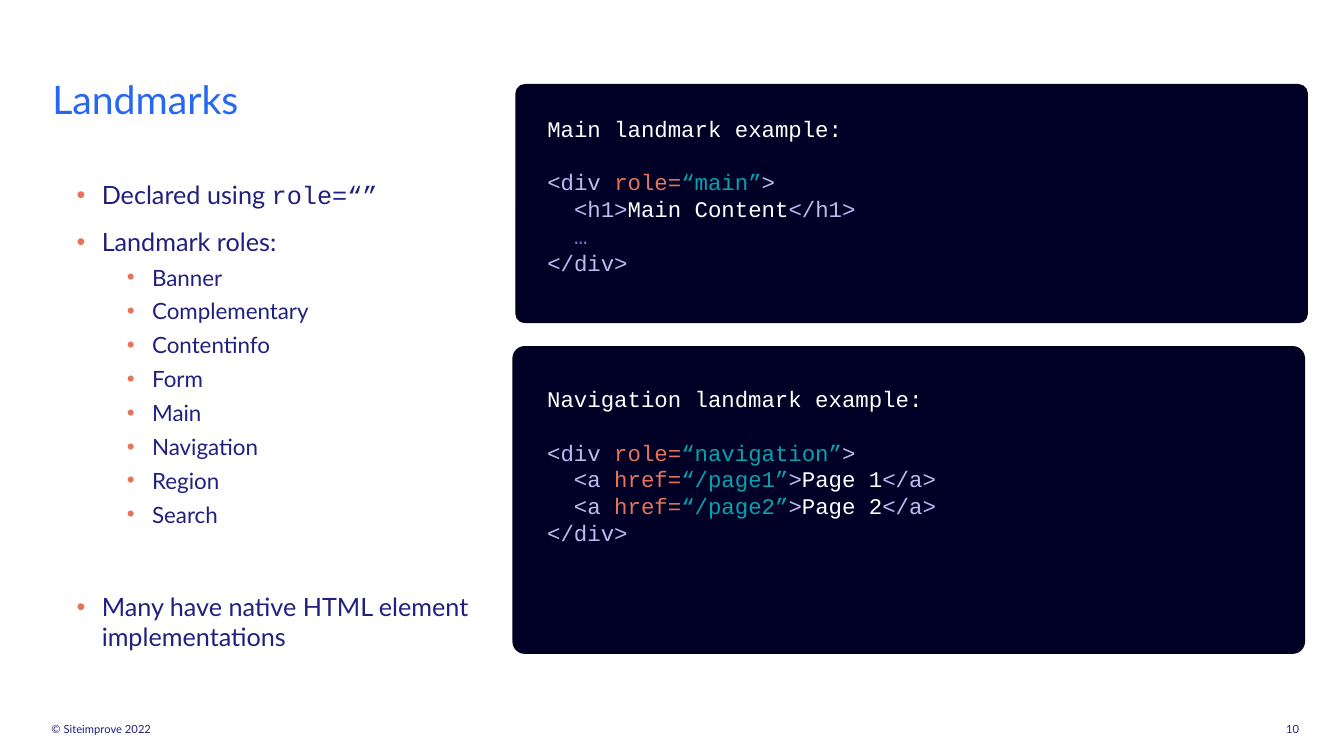
from pptx import Presentation
from pptx.dml.color import RGBColor as Rgb
from pptx.enum.shapes import MSO_SHAPE as Shape
from pptx.enum.text import MSO_ANCHOR as Anchor, PP_ALIGN as Align
from pptx.oxml.ns import qn
from pptx.util import Pt
from lxml.etree import SubElement as Sub

# Content
TITLE = "Landmarks"
FOOTER = "© Siteimprove 2022"
NUMBER = "10"
SANS, MONO = "Lato", "Courier New"
COLORS = {
    "title": "2767F1", "text": "21207F", "bullet": "E57459",
    "panel": "000026", "edge": "00001C", "plain": "FFFFFF",
    "tag": "BDBBF1", "attr": "E57459", "value": "00A5AE", "dots": "7C77E4",
}
# Bullets: level, space before, runs of (text, font)
ROLES = ["Banner", "Complementary", "Contentinfo", "Form",
         "Main", "Navigation", "Region", "Search"]
BULLETS = [
    (0, 0, [("Declared using ", SANS), ("role=“”", MONO)]),
    (0, 12, [("Landmark roles:", SANS)]),
    *[(1, 5, [(role, SANS)]) for role in ROLES],
    (0, 45.6, [("Many have native HTML element implementations", SANS)]),
]
LEVELS = [(18, 18), (16, 54)]  # font size, left margin
HANG = 18


def link(page):
    return [("  <a ", "tag"), ("href=", "attr"), (f"“/page{page}”", "value"),
            (">", "tag"), (f"Page {page}", "plain"), ("</a>", "tag")]


def block(role, inner):
    return [[("<div ", "tag"), ("role=", "attr"), (f"“{role}”", "value"), (">", "tag")],
            *inner, [("</div>", "tag")]]


# Panels: panel box, text box, heading, code lines
PANELS = [
    ((368.6, 60.5, 565.2, 169.9), (383.8, 77, 527, 123.8), "Main landmark example:",
     block("main", [
         [("  <h1>", "tag"), ("Main Content", "plain"), ("</h1>", "tag")],
         [("  …", "dots")],
     ])),
    ((366.5, 247.7, 565.2, 218.9), (383.8, 270, 465.1, 123.8), "Navigation landmark example:",
     block("navigation", [link(1), link(2)])),
]
CODE_SIZE, CODE_LINE = 16, 19.2

deck = Presentation()
deck.slide_width, deck.slide_height = Pt(960), Pt(540)
slide = deck.slides.add_slide(deck.slide_layouts[6])
shapes = slide.shapes


def style(run, size, font, color):
    run.font.size = Pt(size)
    run.font.name = font
    run.font.color.rgb = Rgb.from_string(COLORS[color])


def add_box(box, inset=(0, 0)):
    frame = shapes.add_textbox(*map(Pt, box)).text_frame
    frame.word_wrap = True
    frame.margin_left = frame.margin_right = Pt(inset[0])
    frame.margin_top = frame.margin_bottom = Pt(inset[1])
    return frame


def add_label(box, text, size, color, anchor=Anchor.TOP):
    frame = add_box(box)
    frame.text = text
    frame.vertical_anchor = anchor
    para = frame.paragraphs[0]
    style(para.runs[0], size, SANS, color)
    return para


def add_runs(para, runs):
    for text, _ in runs:
        para.add_run().text = text
    return zip(para.runs, runs)


def next_para(frame, first):
    return frame.paragraphs[0] if first else frame.add_paragraph()


def add_bullet(para, left):
    props = para._p.get_or_add_pPr()
    props.set("marL", str(Pt(left)))
    props.set("indent", str(Pt(-HANG)))
    tint = Sub(props, qn("a:buClr"))
    Sub(tint, qn("a:srgbClr"), val=COLORS["bullet"])
    Sub(props, qn("a:buFont"), typeface="Arial")
    Sub(props, qn("a:buChar"), char="•")


# Title and footer
add_label((36.7, 511.2, 261.4, 19.4), FOOTER, 8, "text", Anchor.MIDDLE)
add_label((37.4, 57.6, 516.2, 31), TITLE, 28, "title").line_spacing = 0.9

# Bullet list
frame = add_box((54.7, 128.2, 326.2, 373))
for i, (level, gap, runs) in enumerate(BULLETS):
    size, left = LEVELS[level]
    para = next_para(frame, i == 0)
    para.level = level
    add_bullet(para, left)
    para.space_before = Pt(gap)
    for run, (_, font) in add_runs(para, runs):
        style(run, size, font, "text")

# Code panels
for area, box, head, code in PANELS:
    panel = shapes.add_shape(Shape.ROUNDED_RECTANGLE, *map(Pt, area))
    panel.adjustments[0] = 0.038
    panel.shadow.inherit = False
    panel.fill.solid()
    panel.fill.fore_color.rgb = Rgb.from_string(COLORS["panel"])
    panel.line.color.rgb = Rgb.from_string(COLORS["edge"])
    panel.line.width = Pt(1)

    frame = add_box(box, (7.2, 5))
    for i, runs in enumerate([[(head, "plain")], *code]):
        para = next_para(frame, i == 0)
        para.line_spacing = Pt(CODE_LINE)
        para.space_before = Pt(CODE_LINE if i == 1 else 0)
        for run, (_, color) in add_runs(para, runs):
            style(run, CODE_SIZE, MONO, color)

# Slide number
add_label((905, 501.8, 36.7, 38.2), NUMBER, 8, "text", Anchor.MIDDLE).alignment = Align.CENTER

deck.save("out.pptx")
